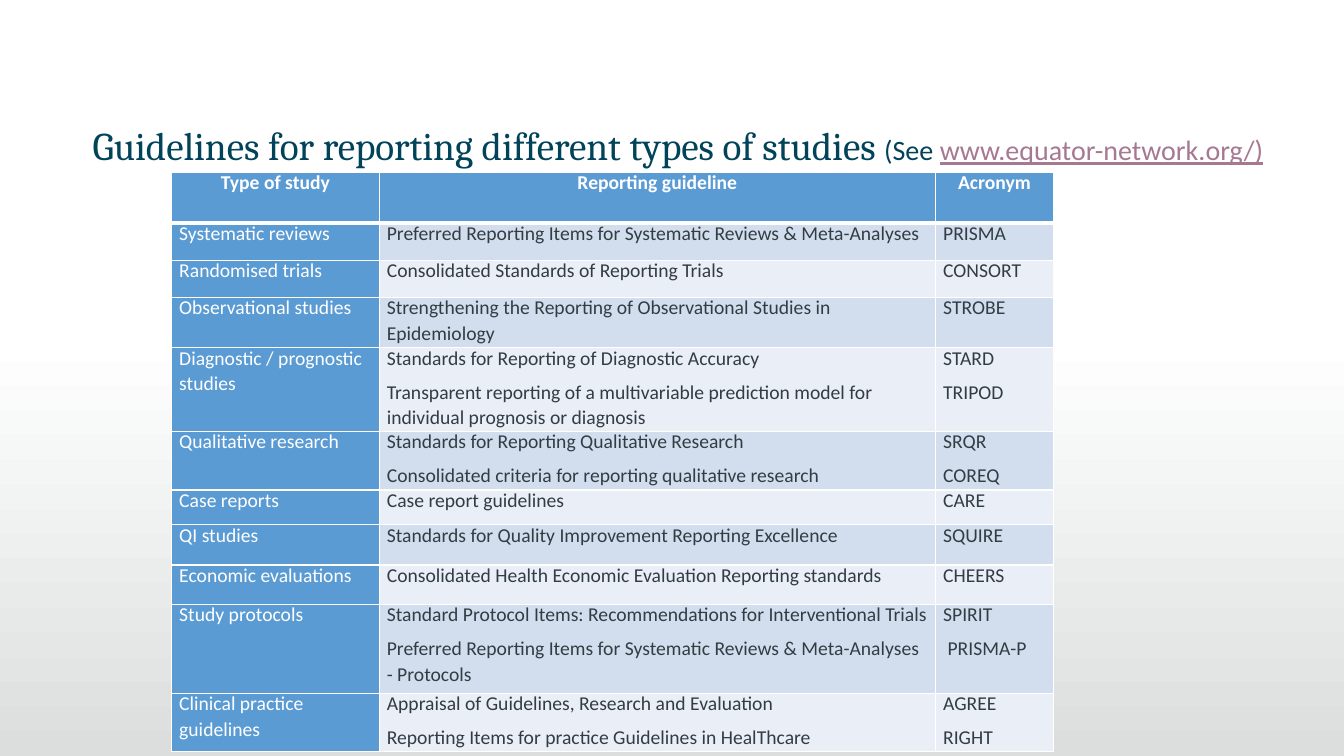
from dataclasses import dataclass

from lxml.etree import SubElement
from pptx import Presentation
from pptx.dml.color import RGBColor
from pptx.enum.shapes import MSO_SHAPE
from pptx.enum.text import MSO_ANCHOR, MSO_AUTO_SIZE, PP_ALIGN
from pptx.oxml.ns import qn
from pptx.util import Pt

WIDE, HIGH = 960, 540
WHITE, BLUE, INK, TEAL, LINK = "FFFFFF", "5B9BD4", "323D43", "014359", "A67891"
BANDS = ("D2DEEE", "EAEEF7")
ITEM, WRAP = 7.2, 1.2  # space before a new item and before a carried-on line
INDENT = 5.4


@dataclass
class Run:
    text: str
    size: float
    font: str
    hue: str
    bold: bool = False
    under: bool = False


@dataclass
class Line:
    text: str
    gap: float = 0
    indent: float = INDENT
    pitch: float = 1.0


@dataclass
class Row:
    high: float
    study: list[Line]
    guide: list[Line]
    short: list[Line]


TITLE = [
    Run("Guidelines for reporting different types of studies ", 28, "Cambria", TEAL),
    Run("(See ", 20, "Calibri", TEAL),
    Run("www.equator-network.org/)", 20, "Calibri", LINK, under=True),
]
WIDTHS = (148.3, 397.4, 84.2)
ROWS = [
    Row(36.2, [Line("Type of study")], [Line("Reporting guideline")], [Line("Acronym")]),
    Row(26.6, [Line("Systematic reviews")],
        [Line("Preferred Reporting Items for Systematic Reviews & Meta-Analyses")],
        [Line("PRISMA")]),
    Row(26.6, [Line("Randomised trials")],
        [Line("Consolidated Standards of Reporting Trials")], [Line("CONSORT")]),
    Row(35.9, [Line("Observational studies")],
        [Line("Strengthening the Reporting of Observational Studies in"),
         Line("Epidemiology", WRAP)],
        [Line("STROBE")]),
    Row(59.8, [Line("Diagnostic / prognostic"), Line("studies", WRAP)],
        [Line("Standards for Reporting of Diagnostic Accuracy"),
         Line("Transparent reporting of a multivariable prediction model for "
              "individual prognosis or diagnosis", 6, pitch=1.07)],
        [Line("STARD"), Line("TRIPOD", ITEM)]),
    Row(41.9, [Line("Qualitative research")],
        [Line("Standards for Reporting Qualitative Research"),
         Line("Consolidated criteria for reporting qualitative research", ITEM)],
        [Line("SRQR"), Line("COREQ", ITEM)]),
    Row(24.8, [Line("Case reports")], [Line("Case report guidelines")], [Line("CARE")]),
    Row(28.8, [Line("QI studies")],
        [Line("Standards for Quality Improvement Reporting Excellence")],
        [Line("SQUIRE")]),
    Row(28.1, [Line("Economic evaluations")],
        [Line("Consolidated Health Economic Evaluation Reporting standards")],
        [Line("CHEERS")]),
    Row(63.5, [Line("Study protocols")],
        [Line("Standard Protocol Items: Recommendations for Interventional Trials"),
         Line("Preferred Reporting Items for Systematic Reviews & Meta-Analyses", ITEM),
         Line("- Protocols", WRAP)],
        [Line("SPIRIT"), Line("PRISMA-P", ITEM, 8.6)]),
    Row(41.9, [Line("Clinical practice"), Line("guidelines", WRAP)],
        [Line("Appraisal of Guidelines, Research and Evaluation"),
         Line("Reporting Items for practice Guidelines in HealThcare", ITEM)],
        [Line("AGREE"), Line("RIGHT", ITEM)]),
]


def paint(color, code: str) -> None:
    color.rgb = RGBColor.from_string(code)


def add_run(para, item: Run) -> None:
    run = para.add_run()
    run.text = item.text
    font = run.font
    font.size, font.name = Pt(item.size), item.font
    font.bold, font.underline = item.bold, item.under
    paint(font.color, item.hue)


def clear_inset(box) -> None:
    box.margin_left = box.margin_right = box.margin_top = box.margin_bottom = 0


def add_edge(cell, side: str, width: float) -> None:
    props = cell._tc.get_or_add_tcPr()
    edge = SubElement(props, qn(f"a:ln{side}"), w=str(Pt(width)))
    fill = SubElement(edge, qn("a:solidFill"))
    SubElement(fill, qn("a:srgbClr"), val=WHITE)


def fill_cell(cell, lines: list[Line], row: int, col: int) -> None:
    head = row == 0
    clear_inset(cell)
    for side in "LRTB":
        thick = (head and side == "B") or (row == 1 and side == "T")
        add_edge(cell, side, 3 if thick else 1)
    blue = head or col == 0
    cell.fill.solid()
    paint(cell.fill.fore_color, BLUE if blue else BANDS[(row - 1) % 2])

    frame = cell.text_frame
    for num, line in enumerate(lines):
        para = frame.add_paragraph() if num else frame.paragraphs[0]
        if head:
            para.alignment = PP_ALIGN.CENTER
        else:
            para._p.get_or_add_pPr().set("marL", str(Pt(line.indent)))
        if num:
            para.space_before = Pt(line.gap)
            para.line_spacing = line.pitch
        else:
            para.line_spacing = Pt(15.9 if head else 16.3)
        add_run(para, Run(line.text, 14, "Calibri", WHITE if blue else INK, head))


def add_shade(slide) -> None:
    shade = slide.shapes.add_shape(MSO_SHAPE.RECTANGLE, 0, Pt(240), Pt(WIDE), Pt(300))
    shade.shadow.inherit = False
    shade.line.fill.background()
    shade.fill.gradient()
    shade.fill.gradient_angle = 270
    for stop, code in zip(shade.fill.gradient_stops, (WHITE, "DCDEDE")):
        paint(stop.color, code)
    # Place it behind the title
    slide.shapes._spTree.insert(2, shade._element)


def add_title(slide) -> None:
    title = slide.shapes.title
    title.left, title.top = Pt(66.2), Pt(87.8)
    title.width, title.height = Pt(1009.4), Pt(34.6)
    frame = title.text_frame
    clear_inset(frame)
    frame.word_wrap = True
    frame.auto_size = MSO_AUTO_SIZE.SHAPE_TO_FIT_TEXT
    frame.vertical_anchor = MSO_ANCHOR.TOP
    para = frame.paragraphs[0]
    para.alignment = PP_ALIGN.LEFT
    para.line_spacing = Pt(32.7)
    for item in TITLE:
        add_run(para, item)


def add_grid(slide) -> None:
    high = sum(row.high for row in ROWS)
    table = slide.shapes.add_table(len(ROWS), len(WIDTHS), Pt(122.6), Pt(123),
                                   Pt(sum(WIDTHS)), Pt(high)).table
    table.horz_banding = False
    for col, width in zip(table.columns, WIDTHS):
        col.width = Pt(width)
    for r, row in enumerate(ROWS):
        table.rows[r].height = Pt(row.high)
        for c, lines in enumerate((row.study, row.guide, row.short)):
            fill_cell(table.cell(r, c), lines, r, c)


def main() -> None:
    deck = Presentation()
    deck.slide_width, deck.slide_height = Pt(WIDE), Pt(HIGH)
    slide = deck.slides.add_slide(deck.slide_layouts[5])
    add_shade(slide)
    add_title(slide)
    add_grid(slide)
    deck.save("out.pptx")


if __name__ == "__main__":
    main()
